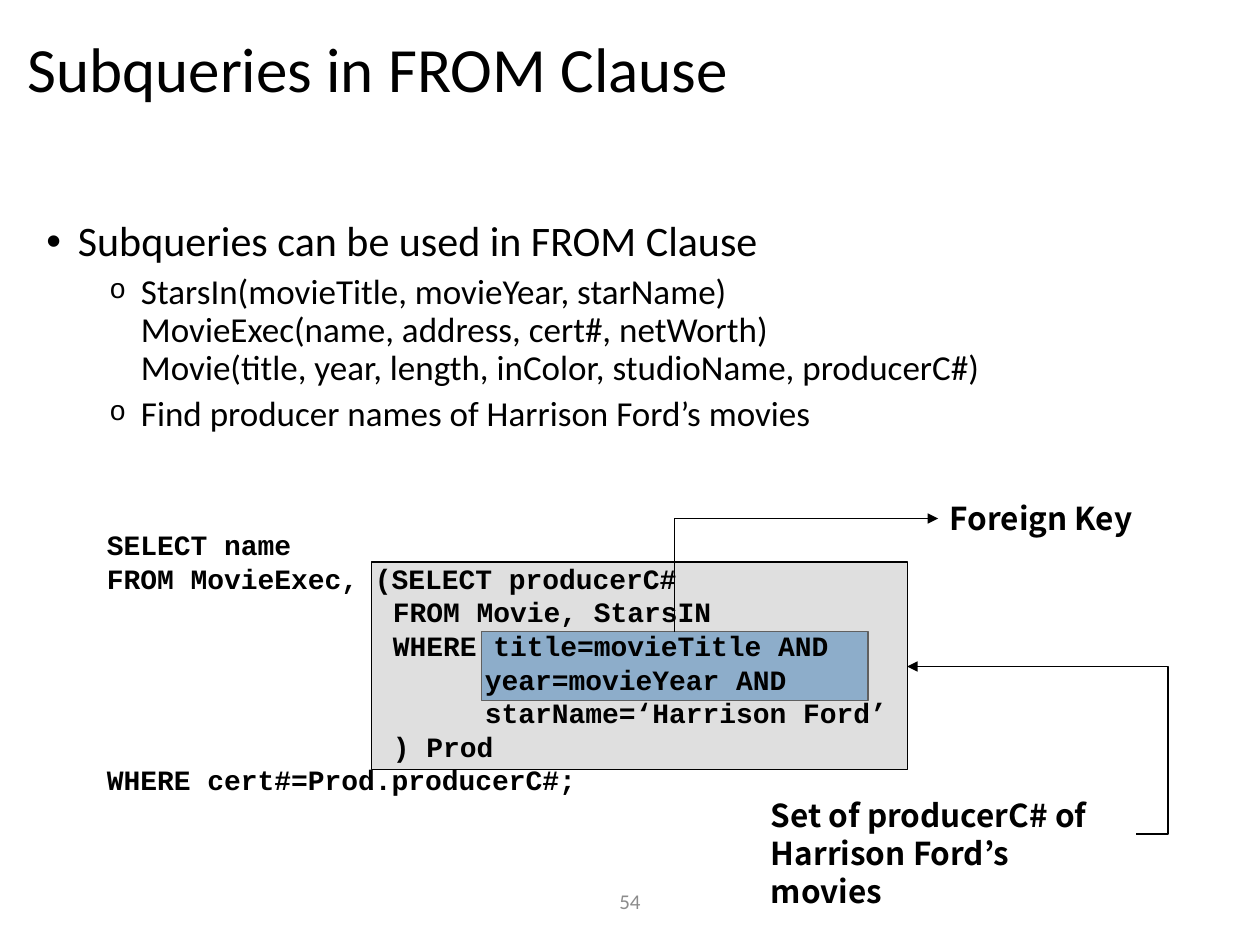
from lxml.etree import SubElement
from pptx import Presentation
from pptx.dml.color import RGBColor
from pptx.enum.shapes import MSO_CONNECTOR as CONN, MSO_SHAPE as SHAPE
from pptx.enum.text import MSO_ANCHOR as ANCHOR, PP_ALIGN as ALIGN
from pptx.oxml.ns import qn
from pptx.util import Inches, Pt

BLACK, GREY, SILVER, BLUE = "000000", "8C8C8C", "C0C0C0", "5B9BD5"
SANS, MONO, LABEL = "Calibri", "Courier New", "Noto Sans CJK KR"

TITLE = "Subqueries in FROM Clause"
BULLETS = [
    (0, "Subqueries can be used in FROM Clause"),
    (1, "StarsIn(movieTitle, movieYear, starName)\v"
        "MovieExec(name, address, cert#, netWorth)\v"
        "Movie(title, year, length, inColor, studioName, producerC#)"),
    (1, "Find producer names of Harrison Ford’s movies"),
]
LEVELS = [
    dict(left=0.25, size=24, before=10, char="•", font="Arial", scale=100),
    dict(left=0.75, size=20, before=5, char="o", font=MONO, scale=80),
]
CODE_INDENTS = [0, 2.27, 3]
CODE = [
    (0, "SELECT name"),
    (0, "FROM MovieExec, (SELECT producerC#"),
    (1, "FROM Movie, StarsIN"),
    (1, "WHERE title=movieTitle AND"),
    (2, "year=movieYear AND"),
    (2, "starName=‘Harrison Ford’"),
    (1, ") Prod"),
    (0, "WHERE cert#=Prod.producerC#;"),
]
BOXES = [
    ((3.82, 5.01, 3.07, 0.55), BLUE, 100),
    ((2.95, 4.46, 4.25, 1.65), SILVER, 50),
]
LABELS = [
    ((6.02, 6.27, 2.99, 0.7), "Set of producerC# of \vHarrison Ford’s movies", True),
    ((7.44, 3.91, 1.65, 0.4), "Foreign Key", False),
]
ARROWS = [
    dict(ends=(9.02, 6.62, 7.2, 5.29), prst="bentConnector3", adj=-13800),
    dict(ends=(5.95, 3.52, 6.85, 5.61), prst="bentConnector2", rot=270),
]


def color(value):
    return RGBColor.from_string(value)


def inches(values):
    return [Inches(v) for v in values]


def add_text(slide, at, lines, size, font=SANS, fill=BLACK, bold=False, wrap=True, anchor=ANCHOR.TOP):
    tf = slide.shapes.add_textbox(*inches(at)).text_frame
    tf.word_wrap, tf.vertical_anchor = wrap, anchor
    for i, line in enumerate(lines):
        p = tf.paragraphs[0] if i == 0 else tf.add_paragraph()
        p.text = line
        for r in p.runs:
            f = r.font
            f.size, f.name, f.bold = Pt(size), font, bold
            f.color.rgb = color(fill)
            SubElement(r._r.get_or_add_rPr(), qn("a:ea"), typeface=font)
    return tf.paragraphs


def indent(p, left, hanging=0):
    pPr = p._p.get_or_add_pPr()
    pPr.set("marL", str(Inches(left)))
    pPr.set("indent", str(-Inches(hanging)))
    return pPr


def add_bullet(p, level):
    style = LEVELS[level]
    p.level, p.line_spacing, p.space_before = level, 0.9, Pt(style["before"])
    for r in p.runs:
        r.font.size = Pt(style["size"])
    pPr = indent(p, style["left"], 0.25)
    SubElement(pPr, qn("a:buSzPct"), val=str(style["scale"] * 1000))
    SubElement(pPr, qn("a:buFont"), typeface=style["font"])
    SubElement(pPr, qn("a:buChar"), char=style["char"])


def add_box(slide, at, fill, alpha):
    s = slide.shapes.add_shape(SHAPE.RECTANGLE, *inches(at))
    s.shadow.inherit = False
    s.fill.solid()
    s.fill.fore_color.rgb = color(fill)
    s.line.color.rgb, s.line.width = color(BLACK), Pt(0.75)
    if alpha < 100:
        clr = s._element.spPr.find(".//" + qn("a:srgbClr"))
        SubElement(clr, qn("a:alpha"), val=str(alpha * 1000))


def add_arrow(slide, ends, prst, adj=None, rot=0):
    c = slide.shapes.add_connector(CONN.ELBOW, *inches(ends))
    c.line.color.rgb, c.line.width = color(BLACK), Pt(0.75)
    spPr = c._element.spPr
    geom = spPr.find(qn("a:prstGeom"))
    geom.set("prst", prst)
    if adj is not None:
        SubElement(geom.find(qn("a:avLst")), qn("a:gd"), name="adj1", fmla=f"val {adj}")
    if rot:
        spPr.find(qn("a:xfrm")).set("rot", str(rot * 60000))
    SubElement(spPr.find(qn("a:ln")), qn("a:tailEnd"), type="triangle")
    SubElement(spPr, qn("a:effectLst"))


def main():
    """Build the slide on subqueries in the FROM clause."""
    prs = Presentation()
    prs.slide_width, prs.slide_height = Inches(10), Inches(7.5)
    slide = prs.slides.add_slide(prs.slide_layouts[6])

    number = add_text(slide, (3.31, 6.95, 3.38, 0.4), ["54"], 12, fill=GREY, anchor=ANCHOR.MIDDLE)
    number[0].alignment = ALIGN.CENTER
    for box in BOXES:
        add_box(slide, *box)
    title = add_text(slide, (0.12, 0.08, 9.76, 0.99), [TITLE], 36, anchor=ANCHOR.MIDDLE)
    title[0].line_spacing = 0.9

    body = add_text(slide, (0.27, 1.7, 9.21, 2.05), [text for _, text in BULLETS], 24)
    for p, (level, _) in zip(body, BULLETS):
        add_bullet(p, level)
    code = add_text(slide, (0.75, 4.14, 7.64, 2.24), [text for _, text in CODE], 16, MONO, bold=True)
    for p, (step, _) in zip(code, CODE):
        indent(p, CODE_INDENTS[step])

    for at, text, wrap in LABELS:
        add_text(slide, at, [text], 18, LABEL, bold=True, wrap=wrap)
    for arrow in ARROWS:
        add_arrow(slide, **arrow)
    prs.save("out.pptx")


if __name__ == "__main__":
    main()
